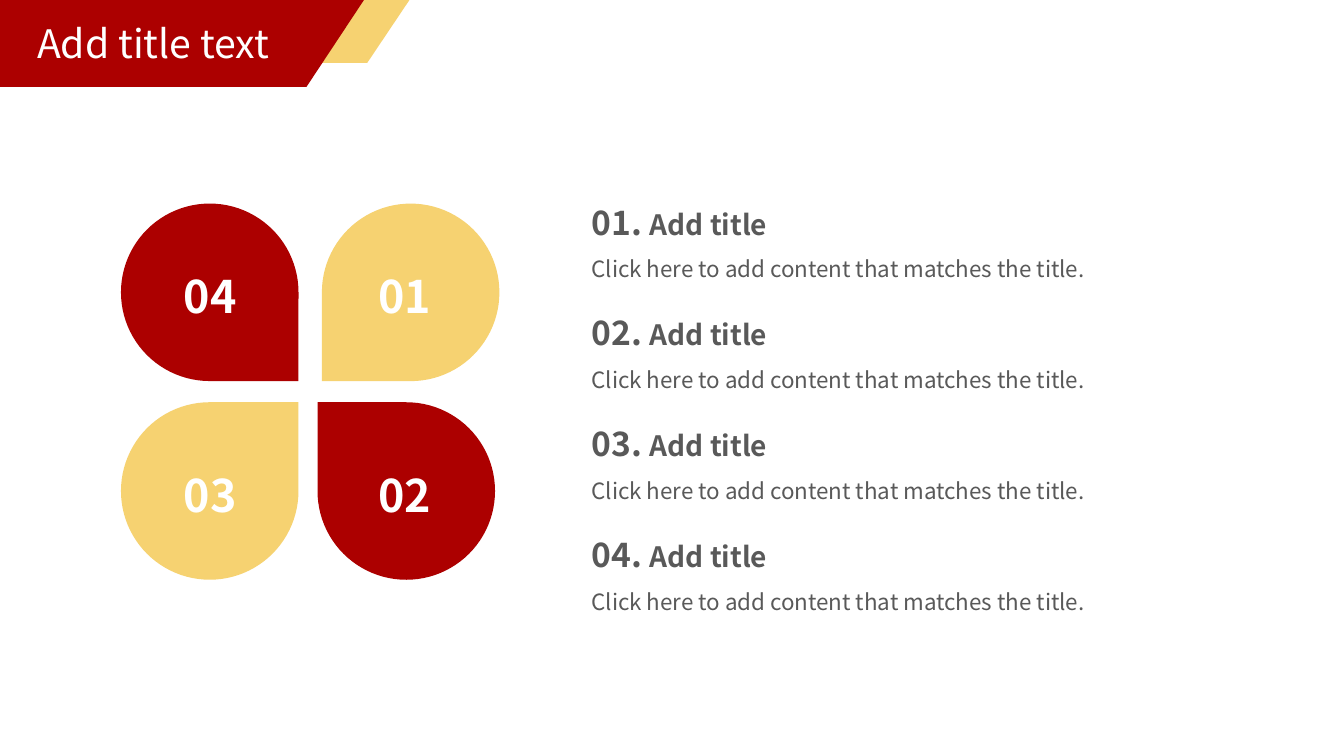
from pptx import Presentation
from pptx.dml.color import RGBColor
from pptx.enum.shapes import MSO_SHAPE
from pptx.enum.text import MSO_ANCHOR, MSO_AUTO_SIZE, PP_ALIGN
from pptx.util import Pt

FONT = "Noto Sans CJK SC"
RED, GOLD, WHITE, GREY = "AC0000", "F6D271", "FFFFFF", "595959"


def paint(sp, color):
    sp.fill.solid()
    sp.fill.fore_color.rgb = RGBColor.from_string(color)
    sp.line.fill.background()
    sp.shadow.inherit = False


def add_text(p, text, size=16, color=GREY, bold=False, align=PP_ALIGN.LEFT, spacing=1.0):
    p.alignment = align
    p.line_spacing = spacing
    r = p.add_run()
    r.text = text
    r.font.name = FONT
    r.font.size = Pt(size)
    r.font.bold = bold
    r.font.color.rgb = RGBColor.from_string(color)


prs = Presentation()
prs.slide_width, prs.slide_height = Pt(960), Pt(540)
s = prs.slides.add_slide(prs.slide_layouts[5])

# Title banner: gold strip behind the red one
for left, right, slant, height, color in [(60, 292.5, 30.2, 45, GOLD), (0, 260, 41, 62, RED)]:
    fb = s.shapes.build_freeform(Pt(left), Pt(0))
    fb.add_line_segments([(Pt(right), Pt(0)), (Pt(right - slant), Pt(height)), (Pt(left), Pt(height))])
    paint(fb.convert_to_shape(), color)

# Title, brought in front of the banner
title = s.shapes.title
title.left, title.top, title.width, title.height = Pt(26.6), Pt(13.7), Pt(182), Pt(34)
s.shapes.element.append(title.element)
tf = title.text_frame
tf.margin_left = tf.margin_right = tf.margin_top = tf.margin_bottom = 0
tf.auto_size = MSO_AUTO_SIZE.NONE
tf.vertical_anchor = MSO_ANCHOR.TOP
add_text(tf.paragraphs[0], "Add title text", size=28, color=WHITE)

# Petals, each turned so that its tip points to the centre
petals = [
    ("03", 86.4, 287.3, 0, GOLD),
    ("02", 226.8, 287.3, 270, RED),
    ("01", 229.9, 145.4, 180, GOLD),
    ("04", 86.4, 145.4, 90, RED),
]
for number, left, top, turn, color in petals:
    sp = s.shapes.add_shape(MSO_SHAPE.TEAR, Pt(left), Pt(top), Pt(126.8), Pt(126.8))
    sp.rotation = turn
    paint(sp, color)

# Petal numbers
for number, left, top, turn, color in petals:
    box_left = 109.4 if left < 200 else 248.4
    tf = s.shapes.add_textbox(Pt(box_left), Pt(top + 43.2), Pt(81.4), Pt(46)).text_frame
    tf.word_wrap = True
    add_text(tf.paragraphs[0], number, size=32, color=WHITE, bold=True, align=PP_ALIGN.CENTER)

# Numbered descriptions
for i in range(4):
    tf = s.shapes.add_textbox(Pt(415.4), Pt(126 + 79.2 * i), Pt(478), Pt(76.3)).text_frame
    tf.word_wrap = True
    heading, body = tf.paragraphs[0], tf.add_paragraph()
    add_text(heading, f"{i + 1:02}. ", size=24, bold=True, spacing=1.5)
    add_text(heading, "Add title", size=20, bold=True, spacing=1.5)
    add_text(body, "Click here to add content that matches the title.", spacing=1.5)

prs.save("out.pptx")
